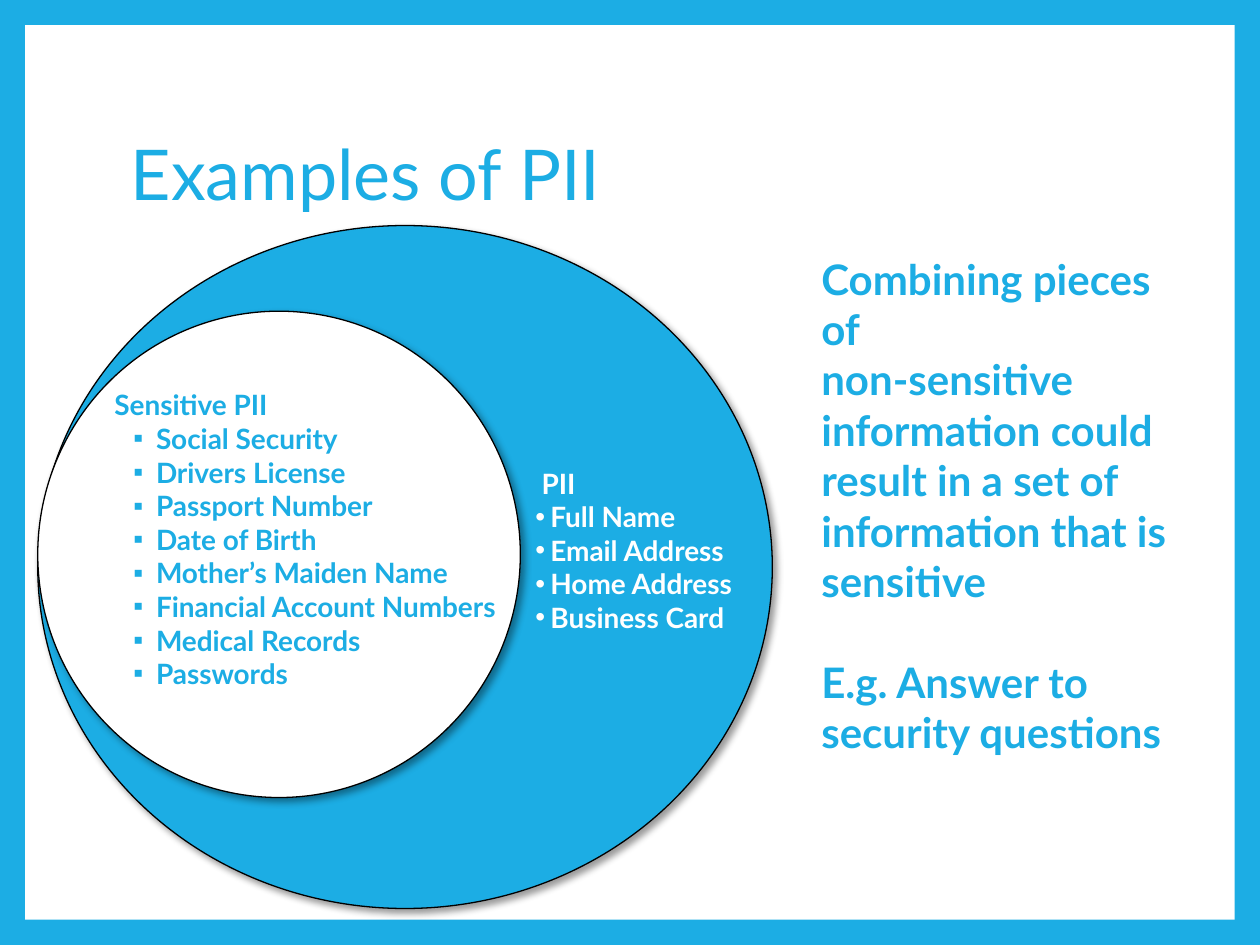
from lxml.etree import SubElement
from pptx import Presentation
from pptx.dml.color import RGBColor
from pptx.enum.shapes import MSO_SHAPE
from pptx.enum.text import MSO_ANCHOR
from pptx.oxml.ns import qn
from pptx.util import Emu, Inches, Pt

BLUE, WHITE, BLACK = "1CADE4", "FFFFFF", "000000"
FONT = "Lato"

# Content: a head and its bulleted items
TITLE = "Examples of PII"
PII = ("PII", ["Full Name", "Email Address", "Home Address", "Business Card"])
SECRET = ("Sensitive PII", [
    "Social Security", "Drivers License", "Passport Number", "Date of Birth",
    "Mother’s Maiden Name", "Financial Account Numbers", "Medical Records",
    "Passwords"])
# Side note: text and space before in points
NOTE = [
    ("Combining pieces of", 0),
    ("non-sensitive information could result in a set of "
     "information that is sensitive", 0),
    ("E.g. Answer to security questions", 28.8)]

# Places: left, top, width, height
FRAME = (0.2, 0.2, 9.6, 7.1)
OUTER = (0.3, 1.79, 5.83, 5.42)
INNER = (0.3, 2.47, 3.83, 3.86)


def rgb(code):
    return RGBColor.from_string(code)


def style(font, size, color, bold=True):
    look = {"name": FONT, "size": Pt(size), "bold": bold}
    for key, value in look.items():
        setattr(font, key, value)
    font.color.rgb = rgb(color)


def draw(slide, kind, box, color):
    shape = slide.shapes.add_shape(kind, *map(Inches, box))
    shape.shadow.inherit = False
    shape.fill.solid()
    shape.fill.fore_color.rgb = rgb(color)
    shape.line.fill.background()
    return shape


def disc(slide, box, color):
    shape = draw(slide, MSO_SHAPE.OVAL, box, color)
    shape.line.color.rgb = rgb(BLACK)
    shape.line.width = Pt(0.75)
    # Soft shadow to the lower right
    effect = shape._element.spPr.find(qn("a:effectLst"))
    shade = SubElement(effect, qn("a:outerShdw"), blurRad=str(Pt(4)),
                       dist=str(Pt(3)), dir=str(45 * 60000),
                       algn="tl", rotWithShape="0")
    tint = SubElement(shade, qn("a:srgbClr"), val=BLACK)
    SubElement(tint, qn("a:alpha"), val="40000")


def text_box(slide, box):
    frame = slide.shapes.add_textbox(*map(Inches, box)).text_frame
    frame.word_wrap = True
    return frame


def add_line(frame, text, size, color, bold=True):
    first = frame.paragraphs[0]
    para = first if not first.runs else frame.add_paragraph()
    run = para.add_run()
    run.text = text
    style(run.font, size, color, bold)
    return para


def indent(para, left, hang=0, mark=None):
    props = para._p.get_or_add_pPr()
    props.set("marL", str(Inches(left)))
    props.set("indent", str(-Inches(hang)))
    if mark:
        SubElement(props, qn("a:buFont"), typeface="Arial")
        SubElement(props, qn("a:buChar"), char=mark)


def add_list(slide, box, group, color, left, hang, mark):
    head, items = group
    frame = text_box(slide, box)
    indent(add_line(frame, head, 16, color), 0.05)
    for item in items:
        indent(add_line(frame, item, 16, color), left, hang, mark)


def main():
    deck = Presentation()
    deck.slide_width, deck.slide_height = Inches(10), Inches(7.5)
    slide = deck.slides.add_slide(deck.slide_layouts[6])

    # Blue border around a white page
    back = slide.background.fill
    back.solid()
    back.fore_color.rgb = rgb(BLUE)
    draw(slide, MSO_SHAPE.RECTANGLE, FRAME, WHITE)

    # Title
    frame = text_box(slide, (0.94, 0.67, 8.1, 1.48))
    frame.vertical_anchor = MSO_ANCHOR.MIDDLE
    add_line(frame, TITLE, 40, BLUE, False).line_spacing = 0.9

    # Nested discs with their lists
    disc(slide, OUTER, BLUE)
    add_list(slide, (4.15, 3.65, 2.42, 1.48), PII, WHITE, 0.12, 0.12, "•")
    disc(slide, INNER, WHITE)
    add_list(slide, (0.76, 3.03, 3.42, 2.52), SECRET, BLUE, 0.38, 0.18, "▪")

    # Side note
    frame = text_box(slide, (6.42, 1.96, 3.08, 4.14))
    for text, gap in NOTE:
        add_line(frame, text, 24, BLUE).space_before = Pt(gap)

    deck.save("out.pptx")


if __name__ == "__main__":
    main()
